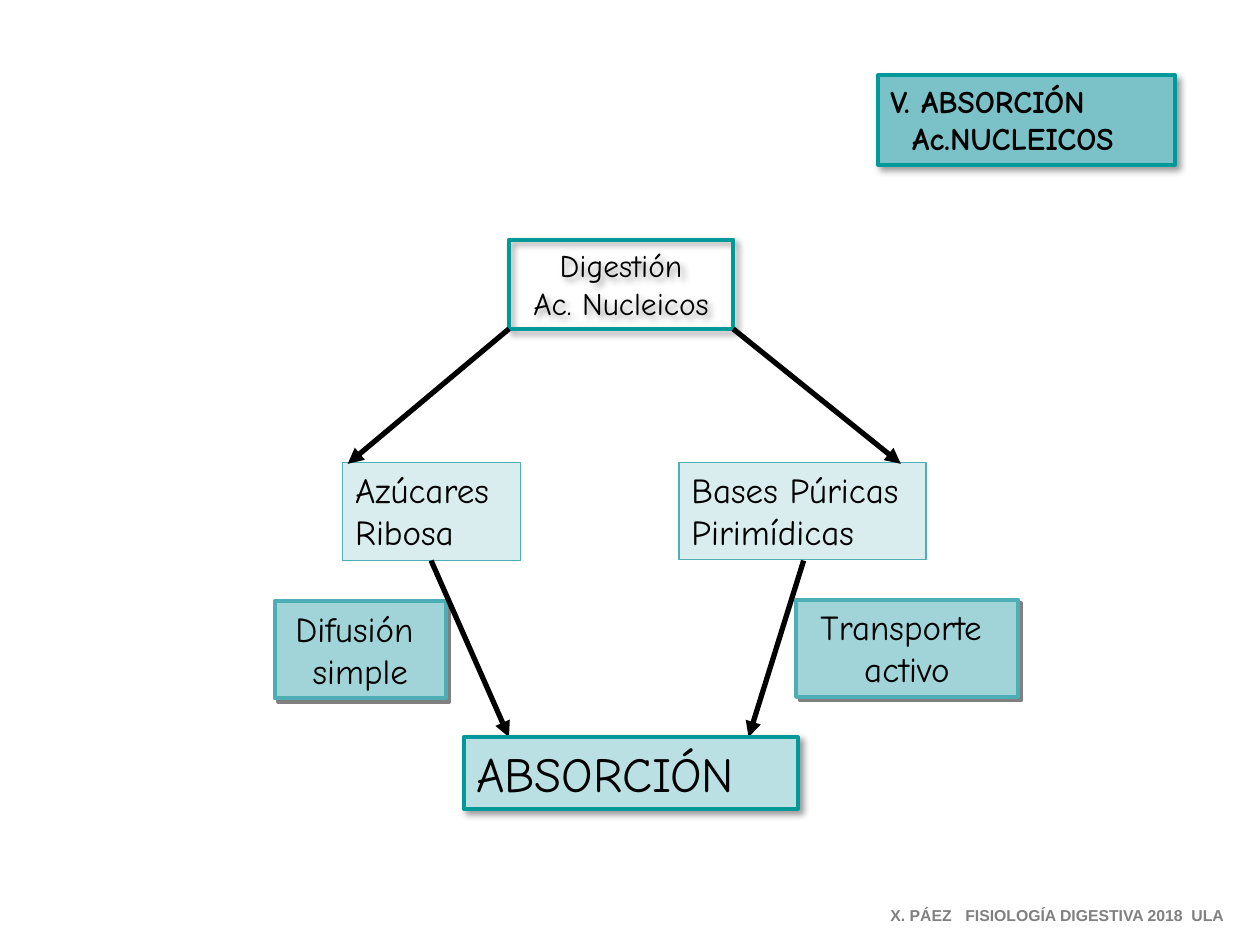
from dataclasses import dataclass
from typing import Optional

from lxml import etree
from pptx import Presentation
from pptx.dml.color import RGBColor
from pptx.enum.shapes import MSO_CONNECTOR, MSO_SHAPE
from pptx.enum.text import MSO_ANCHOR, PP_ALIGN
from pptx.oxml.ns import qn
from pptx.util import Cm, Pt

RECTANGLE = MSO_SHAPE.RECTANGLE
STRAIGHT = MSO_CONNECTOR.STRAIGHT
TOP = MSO_ANCHOR.TOP
LEFT, CENTER = PP_ALIGN.LEFT, PP_ALIGN.CENTER

COLORS = {
    "black": "000000",
    "gray": "808080",
    "teal": "009999",
    "teal_mid": "4DAEB5",
    "title": "7AC2C8",
    "transport": "A0D4D8",
    "absorption": "BBE0E3",
    "product": "D9EDEF",
}


@dataclass
class Shadow:
    color: str
    opacity: int  # percent
    blur: float  # points
    distance: float  # points


SOFT = Shadow("black", 40, 4, 3)
HARD = Shadow("gray", 100, 0, 2.8)


@dataclass
class Box:
    lines: list[str]
    left: float
    top: float
    width: float
    height: float
    fill: Optional[str]
    line: str = "teal"
    line_width: float = 2.25
    shadow: Optional[Shadow] = None
    size: int = 20
    bold: bool = False
    align: PP_ALIGN = LEFT
    last_indent: float = 0


@dataclass
class Arrow:
    start: tuple[float, float]
    end: tuple[float, float]


BOXES = [
    Box(["Digestión", "Ac. Nucleicos"], 10.26, 4.83, 4.52, 1.8, None,
        shadow=SOFT, size=18, align=CENTER),
    Box(["Azúcares", "Ribosa"], 6.91, 9.32, 3.58, 1.98, "product", "teal_mid", 0.75),
    Box(["Bases Púricas", "Pirimídicas"], 13.69, 9.32, 4.98, 1.96, "product", "teal_mid", 0.75),
    Box(["Difusión ", "simple"], 5.54, 12.12, 3.45, 1.96, "transport", "teal_mid",
        shadow=HARD, align=CENTER),
    Box(["Transporte ", "activo"], 16.05, 12.09, 4.47, 1.96, "transport", "teal_mid",
        shadow=HARD, align=CENTER),
]
ARROWS = [
    Arrow((10.26, 6.63), (7.01, 9.35)),
    Arrow((14.78, 6.63), (18.16, 9.35)),
    Arrow((8.69, 11.3), (10.26, 14.86)),
    Arrow((16.2, 11.3), (15.09, 14.86)),
]
FRONT_BOXES = [
    Box(["V. ABSORCIÓN", "Ac.NUCLEICOS"], 17.7, 1.52, 5.99, 1.8, "title",
        shadow=SOFT, size=18, bold=True, last_indent=0.44),
    Box(["ABSORCIÓN"], 9.35, 14.86, 6.73, 1.45, "absorption", shadow=SOFT, size=28),
]
FOOTER_TABS = (1.51, 6.07)


def rgb(name: str) -> RGBColor:
    return RGBColor.from_string(COLORS[name])


def write_text(shape, lines: list[str], *, size: int, font: str = "Comic Neue",
               color: str = "black", bold: bool = False, align: PP_ALIGN = LEFT) -> None:
    frame = shape.text_frame
    frame.word_wrap = True
    frame.vertical_anchor = TOP
    frame.text = "\n".join(lines)
    for paragraph in frame.paragraphs:
        paragraph.alignment = align
        for run in paragraph.runs:
            run.font.name = font
            run.font.size = Pt(size)
            run.font.bold = bold
            run.font.color.rgb = rgb(color)


def add_shadow(shape, shadow: Shadow) -> None:
    effects = shape._element.spPr.find(qn("a:effectLst"))
    outer = etree.SubElement(
        effects, qn("a:outerShdw"), blurRad=str(Pt(shadow.blur)),
        dist=str(Pt(shadow.distance)), dir=str(45 * 60000), algn="tl", rotWithShape="0")
    color = etree.SubElement(outer, qn("a:srgbClr"), val=COLORS[shadow.color])
    etree.SubElement(color, qn("a:alpha"), val=str(shadow.opacity * 1000))


def draw_box(slide, box: Box) -> None:
    shape = slide.shapes.add_shape(
        RECTANGLE, Cm(box.left), Cm(box.top), Cm(box.width), Cm(box.height))
    if box.fill:
        shape.fill.solid()
        shape.fill.fore_color.rgb = rgb(box.fill)
    else:
        shape.fill.background()
    shape.line.color.rgb = rgb(box.line)
    shape.line.width = Pt(box.line_width)
    shape.shadow.inherit = False
    if box.shadow:
        add_shadow(shape, box.shadow)
    write_text(shape, box.lines, size=box.size, bold=box.bold, align=box.align)
    if box.last_indent:
        properties = shape.text_frame.paragraphs[-1]._p.get_or_add_pPr()
        properties.set("marL", str(Cm(box.last_indent)))


def draw_arrow(slide, arrow: Arrow) -> None:
    points = [Cm(value) for value in arrow.start + arrow.end]
    connector = slide.shapes.add_connector(STRAIGHT, *points)
    connector.line.color.rgb = rgb("black")
    connector.line.width = Pt(3)
    etree.SubElement(connector.line._get_or_add_ln(), qn("a:tailEnd"), type="triangle")
    etree.SubElement(connector._element.spPr, qn("a:effectLst"))


def draw_footer(slide) -> None:
    footer = slide.shapes.add_textbox(Cm(17.7), Cm(18.14), Cm(7.34), Cm(0.63))
    write_text(footer, ["X. PÁEZ\tFISIOLOGÍA DIGESTIVA 2018\tULA"],
               size=9, font="Arial", color="gray", bold=True)
    properties = footer.text_frame.paragraphs[0]._p.get_or_add_pPr()
    tabs = etree.SubElement(properties, qn("a:tabLst"))
    for position in FOOTER_TABS:
        etree.SubElement(tabs, qn("a:tab"), pos=str(Cm(position)), algn="l")


def main() -> None:
    presentation = Presentation()
    presentation.slide_width, presentation.slide_height = Cm(25.4), Cm(19.05)
    slide = presentation.slides.add_slide(presentation.slide_layouts[6])

    # Digestion products and their transport
    for box in BOXES:
        draw_box(slide, box)

    # Flow arrows
    for arrow in ARROWS:
        draw_arrow(slide, arrow)

    # Title and final absorption
    for box in FRONT_BOXES:
        draw_box(slide, box)

    draw_footer(slide)
    presentation.save("out.pptx")


if __name__ == "__main__":
    main()
